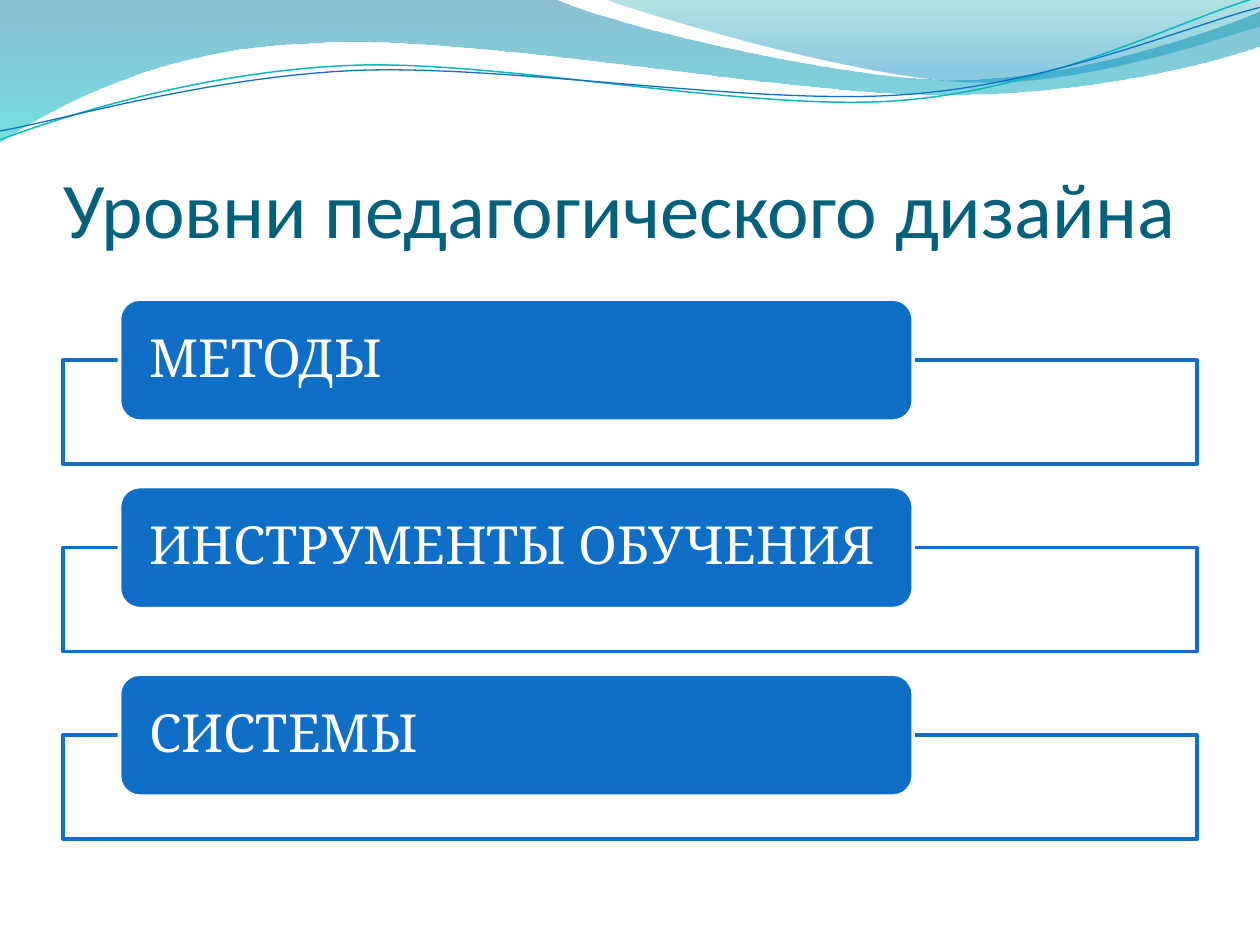
"""Build the slide on the levels of instructional design."""
from dataclasses import dataclass

from lxml.etree import SubElement
from pptx import Presentation
from pptx.dml.color import RGBColor
from pptx.enum.shapes import MSO_SHAPE
from pptx.enum.text import MSO_ANCHOR, MSO_AUTO_SIZE, PP_ALIGN
from pptx.oxml.ns import qn
from pptx.util import Cm, Pt


@dataclass(frozen=True)
class Theme:
    title: RGBColor = RGBColor.from_string("04617B")
    accent: RGBColor = RGBColor.from_string("0F6FC6")
    teal: RGBColor = RGBColor.from_string("0AB8BF")
    white: RGBColor = RGBColor.from_string("FFFFFF")
    wide_wave: tuple = ((0, "0074A1", 45), (1, "00C6CF", 55))
    right_wave: tuple = ((0, "00A1A9", 30), (0.8, "008BBF", 45))
    title_font: str = "Calibri"
    body_font: str = "Cambria"
    title_size: Pt = Pt(45)
    body_size: Pt = Pt(30)


def add_curve(shapes, start, segments, close):
    """Draw straight segments (one point) and cubic curves (three points), in cm."""
    points = [start] + [point for seg in segments for point in seg]
    units = [(round(x * 1000), round(y * 1000)) for x, y in points]
    builder = shapes.build_freeform(*units[0], scale=Cm(0.001))
    builder.add_line_segments(units[1:], close=close)
    sp = builder.convert_to_shape()
    sp.shadow.inherit = False
    path = next(sp.element.iter(qn("a:path")))
    steps = iter(path.findall(qn("a:lnTo")))
    for seg in segments:
        nodes = [next(steps) for _ in seg]
        if len(seg) == 3:
            curve = SubElement(path, qn("a:cubicBezTo"))
            path.replace(nodes[0], curve)
            for node in nodes:
                curve.append(node.find(qn("a:pt")))
            for node in nodes[1:]:
                path.remove(node)
    return sp


def set_alpha(sp, percents):
    """Set the opacity of the fill colours of a shape, in order."""
    for clr, percent in zip(sp.element.spPr.iter(qn("a:srgbClr")), percents):
        SubElement(clr, qn("a:alpha")).set("val", str(percent * 1000))


theme = Theme()
prs = Presentation()
prs.slide_width, prs.slide_height = Cm(25.4), Cm(19.05)
s = prs.slides.add_slide(prs.slide_layouts[5])

waves = [
    (theme.wide_wave, (0, 0), [
        [(11.18, -0.03)],
        [(12.09, 0.43), (16.87, 1.6), (19.25, 1.6)],
        [(21.67, 1.6), (24.33, 0.66), (25.4, 0.23)],
        [(25.43, 0.91)],
        [(24.97, 1.12), (22.1, 1.93), (18.95, 1.91)],
        [(15.8, 1.91), (9.7, 0.71), (6.53, 0.86)],
        [(3.28, 0.91), (1.17, 2.11), (-0.03, 2.87)],
        [(0, 0)],
    ]),
    (theme.right_wave, (12.17, -0.03), [
        [(12.93, 0.28), (17.32, 1.57), (19.53, 1.65)],
        [(21.74, 1.75), (24.41, 0.81), (25.4, 0.53)],
        [(25.4, 0)],
        [(12.17, -0.03)],
    ]),
]
for stops, start, segments in waves:
    sp = add_curve(s.shapes, start, segments, True)
    sp.line.fill.background()
    sp.fill.gradient()
    sp.fill.gradient_angle = 270
    for stop, (position, color, _) in zip(sp.fill.gradient_stops, stops):
        stop.position = position
        stop.color.rgb = RGBColor.from_string(color)
    set_alpha(sp, [alpha for _, _, alpha in stops])

wave_lines = [
    (theme.teal, 0.85, (0, 2.82), [
        [(1.22, 2.36), (4.01, 1.45), (7.04, 1.32)],
        [(10.03, 1.19), (15.06, 2.26), (18.11, 2.03)],
        [(21.16, 1.8), (23.83, 0.38), (25.35, -0.05)],
    ]),
    (theme.accent, 0.75, (0, 2.64), [
        [(1.19, 2.44), (4.17, 1.55), (7.19, 1.42)],
        [(10.24, 1.3), (15.16, 2.13), (18.21, 1.91)],
        [(21.23, 1.7), (23.9, 0.53), (25.4, 0.15)],
    ]),
]
for color, width, start, segments in wave_lines:
    sp = add_curve(s.shapes, start, segments, False)
    sp.fill.background()
    sp.line.color.rgb = color
    sp.line.width = Pt(width)

title = s.shapes.title
title.left, title.top, title.width, title.height = Cm(1.27), Cm(1.96), Cm(22.86), Cm(3.17)
tf = title.text_frame
tf.text = "Уровни педагогического дизайна"
tf.auto_size = MSO_AUTO_SIZE.NONE
tf.vertical_anchor = MSO_ANCHOR.BOTTOM
tf.margin_left = tf.margin_right = tf.margin_bottom = 0
tf.margin_top = Cm(0.13)
p = tf.paragraphs[0]
p.alignment = PP_ALIGN.LEFT
r = p.runs[0]
r.font.name, r.font.size, r.font.color.rgb = theme.title_font, theme.title_size, theme.title

for i, level in enumerate(["МЕТОДЫ", "ИНСТРУМЕНТЫ ОБУЧЕНИЯ", "СИСТЕМЫ"]):
    top = 6.03 + 3.78 * i
    frame = s.shapes.add_shape(
        MSO_SHAPE.RECTANGLE, Cm(1.27), Cm(top + 1.23), Cm(22.86), Cm(2.1))
    label = s.shapes.add_shape(
        MSO_SHAPE.ROUNDED_RECTANGLE, Cm(2.41), Cm(top), Cm(16), Cm(2.46))
    for sp, fill, line in ((frame, theme.white, theme.accent), (label, theme.accent, theme.white)):
        sp.shadow.inherit = False
        sp.fill.solid()
        sp.fill.fore_color.rgb = fill
        sp.line.color.rgb = line
        sp.line.width = Pt(2)
    set_alpha(frame, [90])

    tf = label.text_frame
    tf.text = level
    tf.word_wrap = True
    tf.vertical_anchor = MSO_ANCHOR.MIDDLE
    tf.margin_left = tf.margin_right = Cm(0.48)
    tf.margin_top = tf.margin_bottom = 0
    p = tf.paragraphs[0]
    p.alignment = PP_ALIGN.LEFT
    p.line_spacing = 0.9
    p.space_after = Pt(10.5)
    r = p.runs[0]
    r.font.name, r.font.size, r.font.color.rgb = theme.body_font, theme.body_size, theme.white

prs.save("out.pptx")
